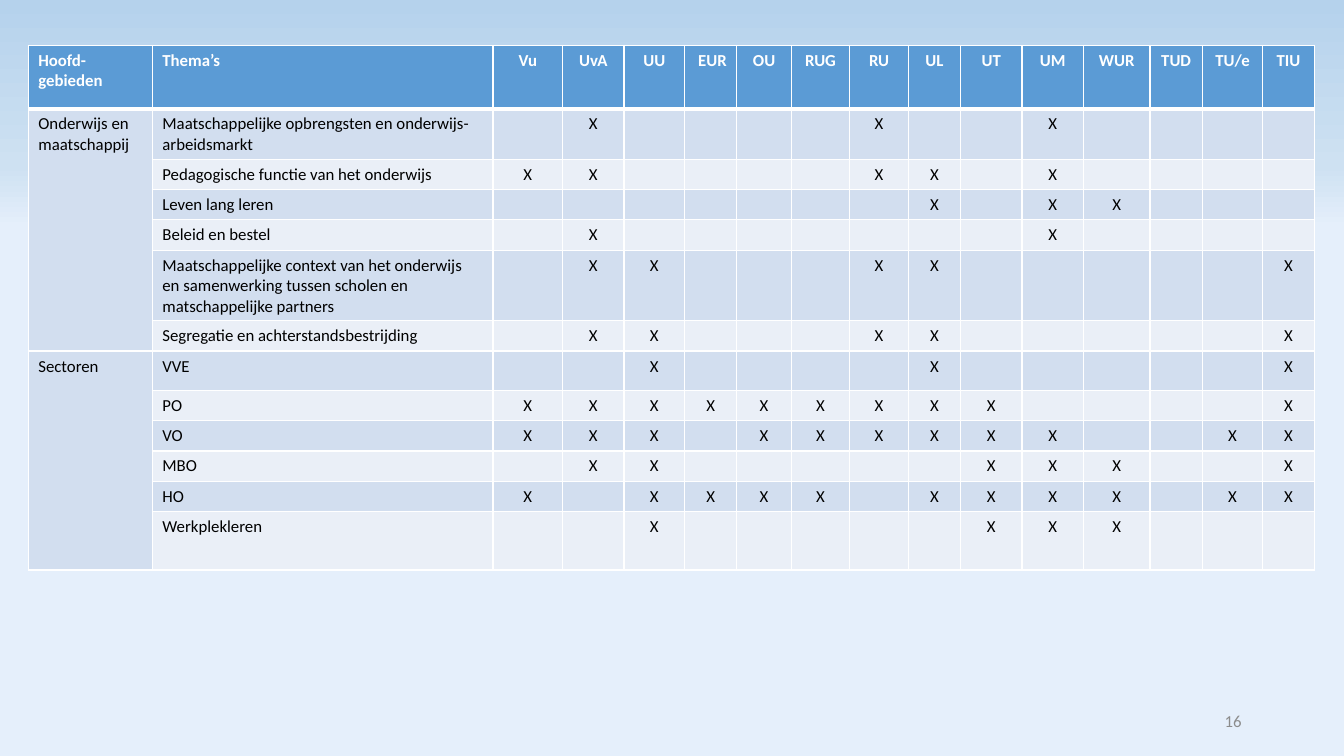
from lxml.etree import SubElement
from pptx import Presentation
from pptx.dml.color import RGBColor
from pptx.enum.text import MSO_ANCHOR as Anchor, PP_ALIGN as Align
from pptx.oxml.ns import qn
from pptx.util import Pt


def rgb(code):
    return RGBColor.from_string(code)


def write(frame, text, color="000000", bold=False, align=Align.LEFT):
    paragraph = frame.paragraphs[0]
    paragraph.alignment = align
    if not text:
        SubElement(paragraph._p, qn("a:endParaRPr"), sz="1200")
        return
    run = paragraph.add_run()
    run.text = text
    run.font.name = "Calibri"
    run.font.size = Pt(12)
    run.font.bold = bold
    run.font.color.rgb = rgb(color)


HEADER, DARK_BAND, LIGHT_BAND, WHITE = "5B9BD5", "D2DEEF", "EAEFF7", "FFFFFF"

universities = ["Vu", "UvA", "UU", "EUR", "OU", "RUG", "RU", "UL", "UT", "UM", "WUR", "TUD", "TU/e", "TIU"]
column_widths = [88.6, 243.4, 49.7, 43.9, 43.2, 37.4, 38.9, 41.8, 41.8, 37.4, 43.9, 43.9, 47.5, 37.4, 43.2, 36.7]
areas = [("Onderwijs en maatschappij", 1, 6), ("Sectoren", 7, 12)]
themes = [
    ("Maatschappelijke opbrengsten en onderwijs-arbeidsmarkt", 33.8, "UvA RU UM"),
    ("Pedagogische functie van het onderwijs", 20.2, "Vu UvA RU UL UM"),
    ("Leven lang leren", 20.2, "UL UM WUR"),
    ("Beleid en bestel", 20.2, "UvA UM"),
    ("Maatschappelijke context van het onderwijs en samenwerking tussen scholen en matschappelijke partners",
     47.5, "UvA UU RU UL TIU"),
    ("Segregatie en achterstandsbestrijding", 20.2, "UvA UU RU UL TIU"),
    ("VVE", 28.1, "UU UL TIU"),
    ("PO", 20.2, "Vu UvA UU EUR OU RUG RU UL UT TIU"),
    ("VO", 20.2, "Vu UvA UU OU RUG RU UL UT UM TU/e TIU"),
    ("MBO", 20.2, "UvA UU UT UM WUR TIU"),
    ("HO", 20.2, "Vu UU EUR OU RUG UL UT UM WUR TU/e TIU"),
    ("Werkplekleren", 41.8, "UU UT UM WUR"),
]

deck = Presentation()
deck.slide_width, deck.slide_height = Pt(960), Pt(540)
slide = deck.slides.add_slide(deck.slide_layouts[6])

backdrop = slide.background.fill
backdrop.gradient()
backdrop.gradient_angle = 270
stops = slide.element.find(".//" + qn("a:gsLst"))
stops.clear()
for percent, color in [(0, "B5D2EC"), (22, "CEE1F2"), (30, "E5EFFB"), (100, "E5EFFB")]:
    stop = SubElement(stops, qn("a:gs"), pos=str(percent * 1000))
    SubElement(stop, qn("a:srgbClr"), val=color)

page_number = slide.shapes.add_textbox(Pt(678), Pt(500.4), Pt(216), Pt(28.8)).text_frame
page_number.word_wrap = True
page_number.vertical_anchor = Anchor.MIDDLE
write(page_number, "16", color="8C8C8C", align=Align.RIGHT)

row_heights = [45.4] + [height for _, height, _ in themes]
matrix = slide.shapes.add_table(
    len(row_heights), len(column_widths), Pt(20.2), Pt(32.4), Pt(sum(column_widths)), Pt(sum(row_heights))
).table
for column, width in zip(matrix.columns, column_widths):
    column.width = Pt(width)
for row, height in zip(matrix.rows, row_heights):
    row.height = Pt(height)

area_starts = {first: area for area, first, _ in areas}
contents = [["Hoofd-gebieden", "Thema’s"] + universities]
for number, (theme, _, marked) in enumerate(themes, start=1):
    marks = ["X" if name in marked.split() else "" for name in universities]
    contents.append([area_starts.get(number, ""), theme] + marks)

for r, texts in enumerate(contents):
    for c, text in enumerate(texts):
        cell = matrix.cell(r, c)
        borders = cell._tc.get_or_add_tcPr()
        for side in ("lnL", "lnR", "lnT", "lnB"):
            thick = (r, side) in [(0, "lnB"), (1, "lnT")]
            line = SubElement(borders, qn("a:" + side), w=str(Pt(3 if thick else 1)))
            SubElement(SubElement(line, qn("a:solidFill")), qn("a:srgbClr"), val=WHITE)
        cell.fill.solid()
        band = HEADER if r == 0 else DARK_BAND if r % 2 or c == 0 else LIGHT_BAND
        cell.fill.fore_color.rgb = rgb(band)
        align = Align.LEFT if c < 2 else Align.RIGHT if text == "EUR" else Align.CENTER
        write(cell.text_frame, text, color=WHITE if r == 0 else "000000", bold=r == 0, align=align)

for _, first, last in areas:
    matrix.cell(first, 0).merge(matrix.cell(last, 0))

deck.save("out.pptx")
